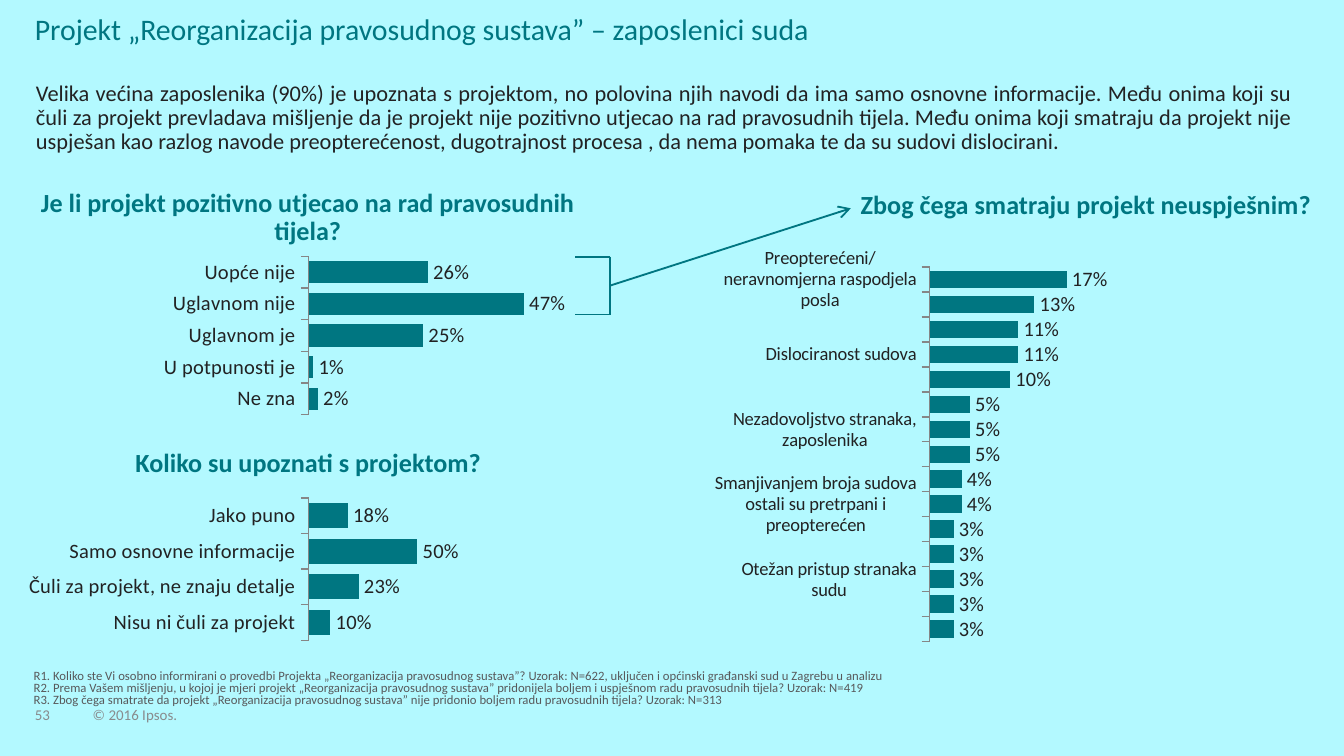
from pptx import Presentation
from pptx.chart.data import CategoryChartData
from pptx.dml.color import RGBColor
from pptx.enum.chart import XL_CHART_TYPE, XL_LABEL_POSITION, XL_TICK_MARK
from pptx.enum.shapes import MSO_CONNECTOR
from pptx.enum.text import MSO_ANCHOR, PP_ALIGN
from pptx.oxml import parse_xml
from pptx.oxml.ns import nsdecls, qn
from pptx.util import Pt

BAR = XL_CHART_TYPE.BAR_CLUSTERED
OUTSIDE_END = XL_LABEL_POSITION.OUTSIDE_END
TICK_NONE, TICK_OUTSIDE = XL_TICK_MARK.NONE, XL_TICK_MARK.OUTSIDE
STRAIGHT = MSO_CONNECTOR.STRAIGHT
TOP, BOTTOM = MSO_ANCHOR.TOP, MSO_ANCHOR.BOTTOM
LEFT, CENTER, JUSTIFY = PP_ALIGN.LEFT, PP_ALIGN.CENTER, PP_ALIGN.JUSTIFY

FONT = "Calibri"
TEAL, INK, NOTE, GRAY = "007681", "222223", "58595B", "888B8D"
BACKGROUND, AXIS = "B3F9FF", "868686"
PERCENT = "###0%"

INTRODUCTION = (
    "Velika većina zaposlenika (90%) je upoznata s projektom, no polovina njih navodi da ima "
    "samo osnovne informacije. Među onima koji su čuli za projekt prevladava mišljenje da je "
    "projekt nije pozitivno utjecao na rad pravosudnih tijela. Među onima koji smatraju da "
    "projekt nije uspješan kao razlog navode preopterećenost, dugotrajnost procesa , da nema "
    "pomaka te da su sudovi dislocirani."
)
QUESTIONS = [
    "R1. Koliko ste Vi osobno informirani o provedbi Projekta „Reorganizacija pravosudnog "
    "sustava”? Uzorak: N=622, uključen i općinski građanski sud u Zagrebu u analizu",
    "R2. Prema Vašem mišljenju, u kojoj je mjeri projekt „Reorganizacija pravosudnog sustava” "
    "pridonijela boljem i uspješnom radu pravosudnih tijela? Uzorak: N=419",
    "R3. Zbog čega smatrate da projekt „Reorganizacija pravosudnog sustava” nije pridonio "
    "boljem radu pravosudnih tijela? Uzorak: N=313",
]
IMPACT = [("Uopće nije", 0.26), ("Uglavnom nije", 0.47), ("Uglavnom je", 0.25),
          ("U potpunosti je", 0.01), ("Ne zna", 0.02)]
AWARENESS = [("Jako puno", 0.18), ("Samo osnovne informacije", 0.5),
             ("Čuli za projekt, ne znaju detalje", 0.23), ("Nisu ni čuli za projekt", 0.1)]
REASONS = [
    ("Preopterećeni/ neravnomjerna raspodjela posla", 0.17),
    ("Dugotrajnost procesa, dugo trajanje sporova", 0.13),
    ("Ne vidi se pomak", 0.11),
    ("Dislociranost sudova", 0.11),
    ("Nisu ostvarene uštede", 0.1),
    ("Samo formalne izmjene", 0.05),
    ("Nezadovoljstvo stranaka, zaposlenika", 0.05),
    ("Samo se smanjio formalan broj sudova/tijela", 0.05),
    ("Troškovi odlaska na sud", 0.04),
    ("Smanjivanjem broja sudova ostali su pretrpani i preopterećen", 0.04),
    ("Neorganiziranost", 0.03),
    ("Manjak sudaca, zaposlenika", 0.03),
    ("Otežan pristup stranaka sudu", 0.03),
    ("Neadekvatne plaće, nagrađivanje", 0.03),
    ("Neadekvatan prostor za rad/ više ljudi u istom prostoru", 0.03),
]


def color(value):
    return RGBColor.from_string(value)


def points(box):
    return [Pt(length) for length in box]


def style_font(font, size, hex_color, bold=False):
    font.name, font.size, font.bold = FONT, Pt(size), bold
    font.color.rgb = color(hex_color)


def add_text(slide, box, lines, size, hex_color, bold=False, align=LEFT, anchor=TOP,
             spacing=0.9, inset=(0, 0), wrap=True):
    frame = slide.shapes.add_textbox(*points(box)).text_frame
    frame.word_wrap = wrap
    frame.vertical_anchor = anchor
    frame.margin_left = frame.margin_right = Pt(inset[0])
    frame.margin_top = frame.margin_bottom = Pt(inset[1])
    for index, line in enumerate(lines):
        paragraph = frame.paragraphs[0] if index == 0 else frame.add_paragraph()
        paragraph.alignment = align
        paragraph.line_spacing = spacing
        run = paragraph.add_run()
        run.text = line
        style_font(run.font, size, hex_color, bold)


def add_heading(slide, box, text):
    add_text(slide, box, [text], 14, TEAL, bold=True, align=CENTER)


def set_plot_layout(chart, layout):
    """Fix the inner plot area as fractions (x, y, w, h) of the chart."""
    plot_area = chart._chartSpace.chart.plotArea
    for old in plot_area.findall(qn("c:layout")):
        plot_area.remove(old)
    modes = '<c:xMode val="edge"/><c:yMode val="edge"/>'
    sizes = "".join(f'<c:{name} val="{value}"/>' for name, value in zip("xywh", layout))
    plot_area.insert(0, parse_xml(
        f'<c:layout {nsdecls("c")}><c:manualLayout><c:layoutTarget val="inner"/>'
        f"{modes}{sizes}</c:manualLayout></c:layout>"))


def add_bar_chart(slide, box, answers, maximum, layout, category_size=11):
    data = CategoryChartData(number_format=PERCENT)
    data.categories = [name for name, _ in answers]
    data.add_series("Series 1", [share for _, share in answers])
    chart = slide.shapes.add_chart(BAR, *points(box), data).chart
    chart.has_legend = chart.has_title = False
    style_font(chart.font, 11, INK)
    set_plot_layout(chart, layout)

    categories = chart.category_axis
    categories.reverse_order = True
    categories.major_tick_mark, categories.minor_tick_mark = TICK_OUTSIDE, TICK_NONE
    categories.format.line.color.rgb = color(AXIS)
    style_font(categories.tick_labels.font, category_size, INK)
    shares = chart.value_axis
    shares.minimum_scale, shares.maximum_scale = 0, maximum
    shares.has_major_gridlines = False
    shares.visible = False

    plot = chart.plots[0]
    plot.gap_width = 42
    plot.vary_by_categories = False
    fill = plot.series[0].format.fill
    fill.solid()
    fill.fore_color.rgb = color(TEAL)
    plot.has_data_labels = True
    labels = plot.data_labels
    labels.show_value = True
    labels.position = OUTSIDE_END
    labels.number_format, labels.number_format_is_linked = PERCENT, False
    style_font(labels.font, 11, INK)


def add_line(slide, start, end, arrow=False):
    connector = slide.shapes.add_connector(STRAIGHT, *points(start + end))
    connector.line.color.rgb = color(TEAL)
    connector.line.width = Pt(1)
    if arrow:
        connector.line._get_or_add_ln().append(
            parse_xml(f'<a:tailEnd {nsdecls("a")} type="arrow"/>'))
    connector._element.spPr.append(parse_xml(f'<a:effectLst {nsdecls("a")}/>'))


def add_bracket(slide, box, target):
    """Bracket the negative answers and point from its middle to the target."""
    left, top, width, height = box
    right, bottom = left + width, top + height
    add_line(slide, (left, top), (right, top))
    add_line(slide, (left, bottom), (right, bottom))
    add_line(slide, (right, top), (right, bottom))
    add_line(slide, (right, top + height / 2), target, arrow=True)


def add_header(slide, left, top):
    add_text(slide, (left, top, 559, 17.5),
             ["Projekt „Reorganizacija pravosudnog sustava” – zaposlenici suda"], 16, TEAL)
    add_text(slide, (left - 6.5, top + 32.5, 687.6, 46.8), [INTRODUCTION], 12, INK,
             align=JUSTIFY, inset=(7.2, 3.6))


def add_footer(slide, left, top):
    add_text(slide, (left - 0.7, top, 638, 20.9), QUESTIONS, 6.8, NOTE,
             anchor=BOTTOM, spacing=0.8)
    for offset, width, text in ((0, 24.5, "53"), (31, 54.7, "© 2016 Ipsos.")):
        add_text(slide, (left + offset, top + 17, width, 13), [text], 8, GRAY,
                 anchor=BOTTOM, spacing=0.85, wrap=False)


def main():
    presentation = Presentation()
    presentation.slide_width, presentation.slide_height = Pt(720), Pt(405)
    slide = presentation.slides.add_slide(presentation.slide_layouts[6])
    slide.background.fill.solid()
    slide.background.fill.fore_color.rgb = color(BACKGROUND)

    add_header(slide, 18.7, 7.9)
    add_heading(slide, (20.2, 101.5, 289.4, 30.2),
                "Je li projekt pozitivno utjecao na rad pravosudnih tijela?")
    add_bar_chart(slide, (5, 132.5, 314.6, 96.5), IMPACT, 0.5, (0.51, 0.05, 0.39, 0.88))
    add_heading(slide, (58.3, 241.2, 213.8, 14.4), "Koliko su upoznati s projektom?")
    add_bar_chart(slide, (5, 262.8, 314.6, 80.6), AWARENESS, 1, (0.51, 0.05, 0.37, 0.95))
    add_heading(slide, (455.8, 103, 252, 17.3), "Zbog čega smatraju projekt neuspješnim?")
    add_bar_chart(slide, (383, 132.5, 331.2, 211.7), REASONS, 0.5,
                  (0.34, 0.05, 0.66, 0.95), category_size=10)
    add_bracket(slide, (308.2, 137.5, 18.7, 31), (455.8, 111.6))
    add_footer(slide, 18.7, 357.8)
    presentation.save("out.pptx")


if __name__ == "__main__":
    main()
